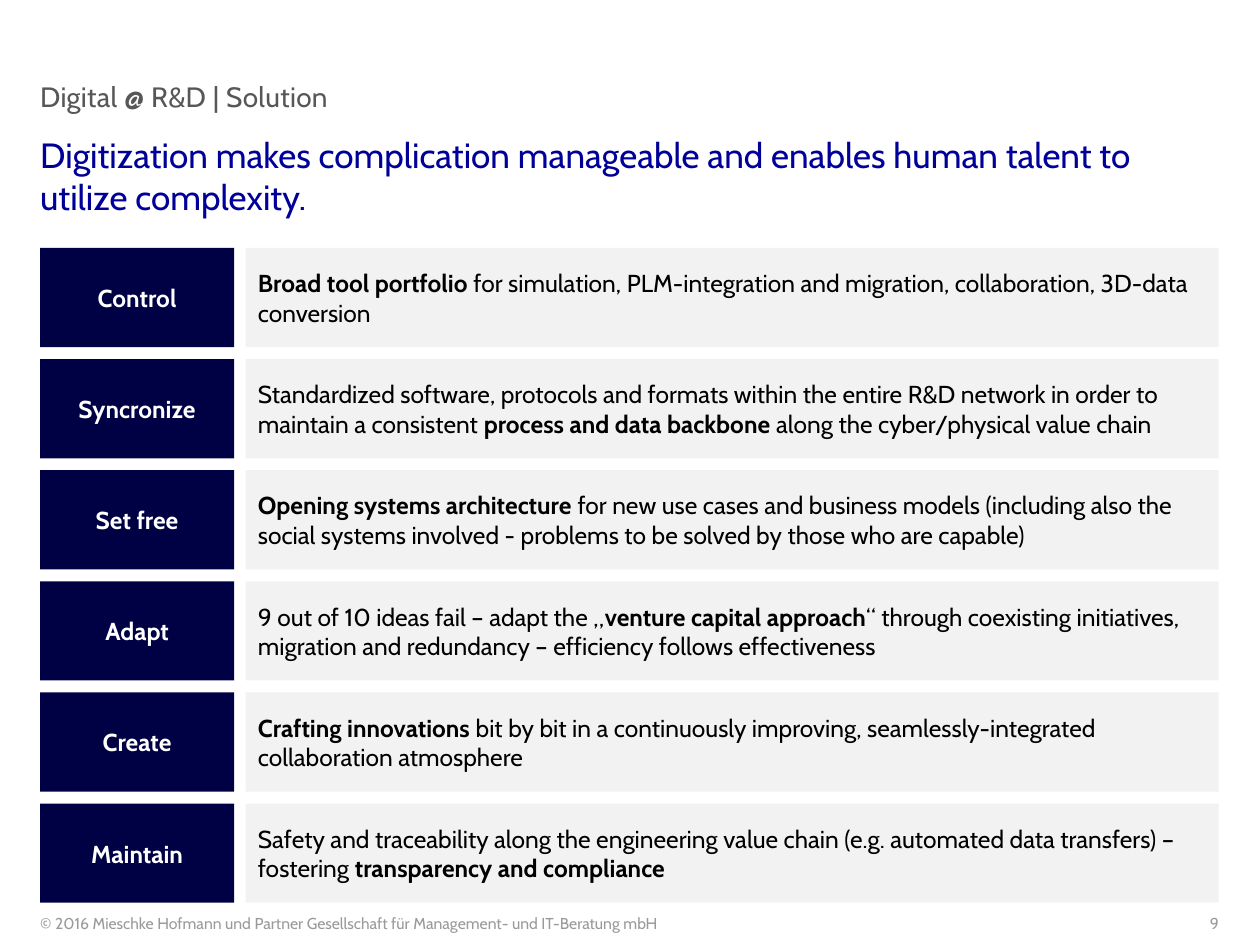
from dataclasses import dataclass

from pptx import Presentation
from pptx.dml.color import RGBColor
from pptx.enum import shapes, text
from pptx.util import Cm, Pt

TOPIC = "Digital @ R&D | Solution"
HEADLINE = "Digitization makes complication manageable and enables human talent to utilize complexity."
COPYRIGHT = "© 2016 Mieschke Hofmann und Partner Gesellschaft für Management- und IT-Beratung mbH"
PAGE_NUMBER = "9"

# Every second piece, split at "*", is bold.
PRINCIPLES = [
    ("Control", "*Broad tool portfolio *for simulation, PLM-integration and migration, "
                "collaboration, 3D-data conversion"),
    ("Syncronize", "Standardized software, protocols and formats within the entire R&D network in order "
                   "to maintain a consistent *process and data backbone *along the cyber/physical value chain"),
    ("Set free", "*Opening systems architecture *for new use cases and business models (including also "
                 "the social systems involved - problems to be solved by those who are capable)"),
    ("Adapt", "9 out of 10 ideas fail – adapt the „*venture capital approach*“ through coexisting "
              "initiatives, migration and redundancy – efficiency follows effectiveness"),
    ("Create", "*Crafting innovations *bit by bit in a continuously improving, "
               "seamlessly-integrated collaboration atmosphere"),
    ("Maintain", "Safety and traceability along the engineering value chain (e.g. automated data "
                 "transfers) – fostering *transparency and compliance*"),
]


@dataclass(frozen=True)
class Theme:
    font: str = "Cabin"
    headline: str = "000099"
    topic: str = "575757"
    footer: str = "9A9A9A"
    label_fill: str = "000045"
    label_text: str = "FFFFFF"
    detail_fill: str = "F2F2F2"
    detail_text: str = "000000"
    headline_size: int = 20
    topic_size: int = 16
    body_size: int = 14
    footer_size: int = 9


THEME = Theme()
LEFT, RIGHT = 0.81, 24.57
LABEL_WIDTH, COLUMN_GAP = 3.91, 0.23
ROWS_TOP, ROW_HEIGHT, ROW_PITCH = 5.0, 2.0, 2.24
FOOTER_TOP, FOOTER_HEIGHT = 18.42, 0.38


def write(box, marked, size, color, align=text.PP_ALIGN.LEFT, bold=False):
    box.text_frame.word_wrap = True
    para = box.text_frame.paragraphs[0]
    para.alignment = align
    for index, piece in enumerate(marked.split("*")):
        if piece:
            span = para.add_run()
            span.text = piece
            span.font.name = THEME.font
            span.font.size = Pt(size)
            span.font.bold = bold or index % 2 == 1
            span.font.color.rgb = RGBColor.from_string(color)
    return para


def add_text(page, place, content, size, color, align=text.PP_ALIGN.LEFT,
             anchor=text.MSO_ANCHOR.TOP):
    box = page.shapes.add_textbox(*map(Cm, place))
    frame = box.text_frame
    frame.margin_left = frame.margin_right = frame.margin_top = frame.margin_bottom = 0
    frame.vertical_anchor = anchor
    return write(box, content, size, color, align)


def add_bar(page, left, top, width, fill):
    bar = page.shapes.add_shape(shapes.MSO_SHAPE.RECTANGLE,
                                Cm(left), Cm(top), Cm(width), Cm(ROW_HEIGHT))
    bar.shadow.inherit = False
    bar.fill.solid()
    bar.fill.fore_color.rgb = RGBColor.from_string(fill)
    bar.line.fill.background()
    bar.text_frame.vertical_anchor = text.MSO_ANCHOR.MIDDLE
    return bar


def main():
    deck = Presentation()
    deck.slide_width, deck.slide_height = Cm(25.4), Cm(19.05)
    page = deck.slides.add_slide(deck.slide_layouts[6])

    add_text(page, (LEFT, FOOTER_TOP, 16.03, FOOTER_HEIGHT), COPYRIGHT,
             THEME.footer_size, THEME.footer)
    add_text(page, (RIGHT - 2.8, FOOTER_TOP, 2.8, FOOTER_HEIGHT), PAGE_NUMBER,
             THEME.footer_size, THEME.footer, text.PP_ALIGN.RIGHT)
    add_text(page, (LEFT, 2.7, RIGHT - LEFT, 1.7), HEADLINE,
             THEME.headline_size, THEME.headline)
    topic = add_text(page, (LEFT, 0.81, 19.81, 1.48), TOPIC, THEME.topic_size,
                     THEME.topic, anchor=text.MSO_ANCHOR.BOTTOM)
    topic.line_spacing = 1.25
    topic.runs[0].font._element.set("spc", "20")

    detail_left = LEFT + LABEL_WIDTH + COLUMN_GAP
    for row, (label, detail) in enumerate(PRINCIPLES):
        top = ROWS_TOP + row * ROW_PITCH
        label_bar = add_bar(page, LEFT, top, LABEL_WIDTH, THEME.label_fill)
        write(label_bar, label, THEME.body_size, THEME.label_text,
              text.PP_ALIGN.CENTER, bold=True)
        detail_bar = add_bar(page, detail_left, top, RIGHT - detail_left, THEME.detail_fill)
        write(detail_bar, detail, THEME.body_size, THEME.detail_text)

    deck.save("out.pptx")


if __name__ == "__main__":
    main()
